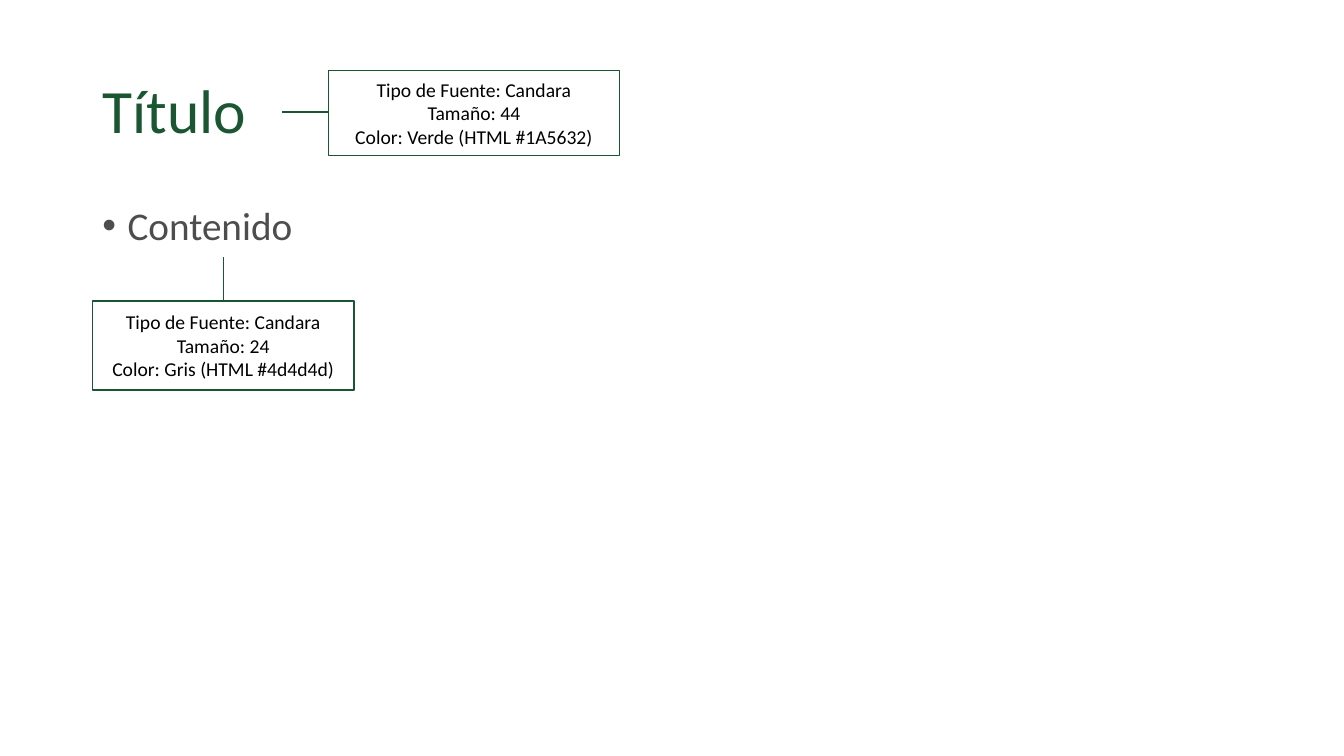
from pptx import Presentation
from pptx.dml.color import RGBColor
from pptx.enum.shapes import MSO_SHAPE
from pptx.enum.text import MSO_ANCHOR, MSO_AUTO_SIZE, PP_ALIGN
from pptx.oxml.ns import qn
from pptx.util import Pt
from lxml.etree import SubElement

GREEN = RGBColor(0x1A, 0x56, 0x32)
GRAY = RGBColor(0x4D, 0x4D, 0x4D)
BLACK = RGBColor(0, 0, 0)
WHITE = RGBColor(255, 255, 255)
FONT = "Calibri"


def style(item, form):
    for key, value in form.items():
        setattr(item, key, value)


def write(para, text, size, color, align):
    para.text = text
    style(para, {"alignment": align, "space_before": Pt(0)})
    style(para.font, {"name": FONT, "size": Pt(size), "bold": False})
    para.font.color.rgb = color


def place(shape, box):
    for side, value in zip(("left", "top", "width", "height"), box):
        setattr(shape, side, Pt(value))


def fill_holder(holder, box, text, size, color, anchor):
    place(holder, box)
    frame = holder.text_frame
    style(frame, {"word_wrap": True, "auto_size": MSO_AUTO_SIZE.NONE,
                  "vertical_anchor": anchor})
    para = frame.paragraphs[0]
    write(para, text, size, color, PP_ALIGN.LEFT)
    para.line_spacing = 0.9
    return para


def add_title(slide, box):
    fill_holder(slide.shapes.title, box, "Título", 44, GREEN,
                MSO_ANCHOR.MIDDLE)


def add_body(slide, box):
    body = slide.placeholders[1]
    # The bullet goes in before the font is set.
    props = body.text_frame.paragraphs[0]._p.get_or_add_pPr()
    props.set("marL", str(Pt(18)))
    props.set("indent", str(Pt(-18)))
    SubElement(props, qn("a:buFont")).set("typeface", "Arial")
    SubElement(props, qn("a:buChar")).set("char", "•")
    fill_holder(body, box, "Contenido", 28, GRAY, MSO_ANCHOR.TOP)


def add_note(slide, box, size, color, leader):
    """Add a callout; leader holds start y, x and end y, x as box shares."""
    note = slide.shapes.add_shape(MSO_SHAPE.LINE_CALLOUT_1,
                                  *[Pt(value) for value in box])
    note.shadow.inherit = False
    note.fill.solid()
    note.fill.fore_color.rgb = WHITE
    note.line.color.rgb = GREEN
    note.line.width = Pt(1)
    for index, share in enumerate(leader):
        note.adjustments[index] = share
    frame = note.text_frame
    style(frame, {"word_wrap": True, "vertical_anchor": MSO_ANCHOR.MIDDLE})
    lines = ("Tipo de Fuente: Candara", f"Tamaño: {size}", f"Color: {color}")
    for index, line in enumerate(lines):
        para = frame.add_paragraph() if index else frame.paragraphs[0]
        write(para, line, 14, BLACK, PP_ALIGN.CENTER)


def main():
    deck = Presentation()
    style(deck, {"slide_width": Pt(960), "slide_height": Pt(540)})
    slide = deck.slides.add_slide(deck.slide_layouts[1])
    add_title(slide, (66, 28.75, 828, 104.4))
    add_body(slide, (66, 143.75, 828, 342.6))
    add_note(slide, (234.6, 50.5, 208, 60.4), 44, "Verde (HTML #1A5632)",
             (0.49, 0, 0.49, -0.16))
    add_note(slide, (66.2, 215, 186.6, 63.5), 24, "Gris (HTML #4d4d4d)",
             (-0.01, 0.5, -0.5, 0.5))
    deck.save("out.pptx")


if __name__ == "__main__":
    main()
